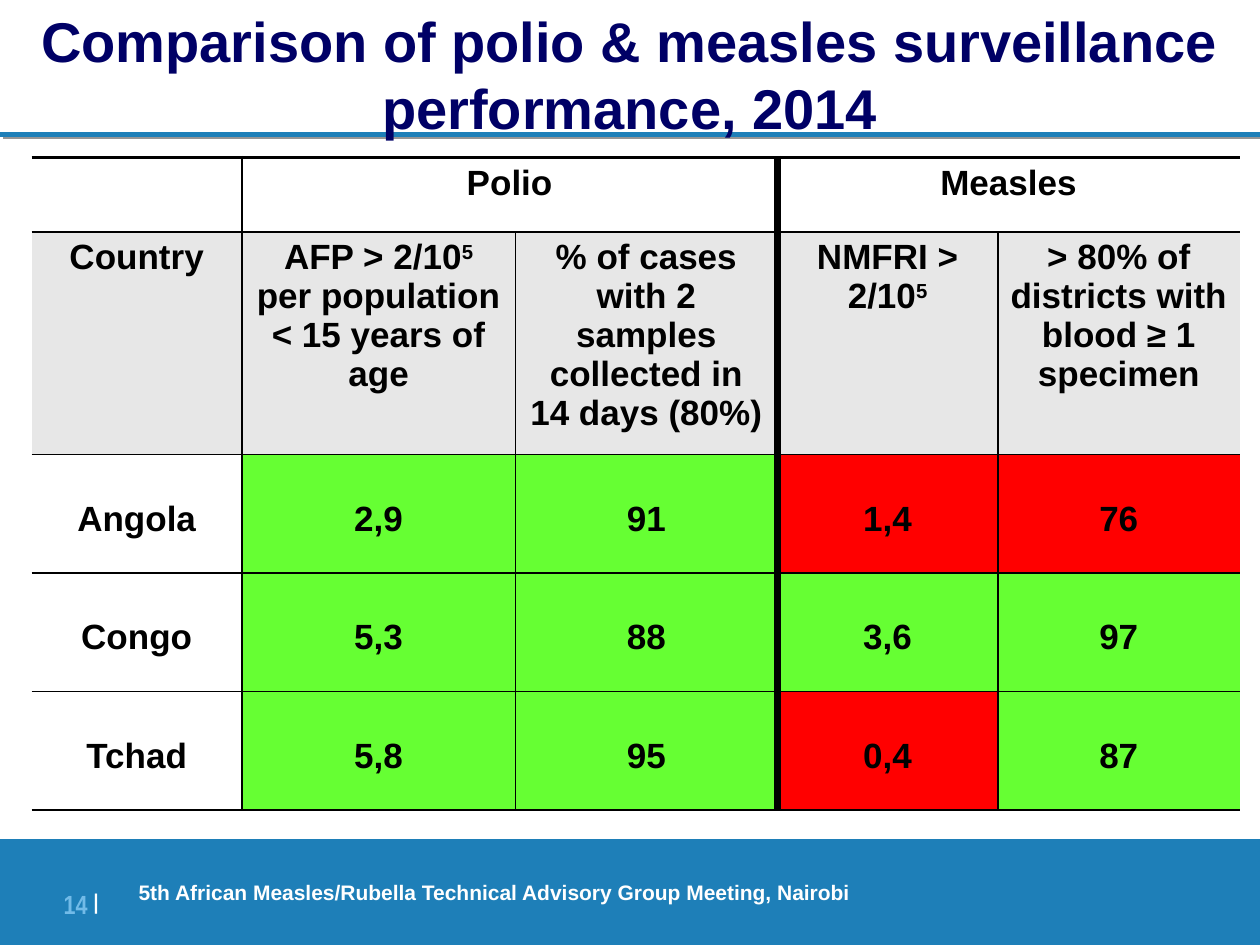
"""Build the slide comparing polio and measles surveillance performance."""
from dataclasses import dataclass

from lxml import etree
from pptx import Presentation
from pptx.dml.color import RGBColor
from pptx.enum.shapes import MSO_CONNECTOR, MSO_SHAPE
from pptx.enum.text import MSO_ANCHOR, PP_ALIGN
from pptx.oxml.ns import qn
from pptx.util import Inches, Pt

CENTER, LEFT, RIGHT = PP_ALIGN.CENTER, PP_ALIGN.LEFT, PP_ALIGN.RIGHT
TOP, MIDDLE = MSO_ANCHOR.TOP, MSO_ANCHOR.MIDDLE
RECTANGLE, STRAIGHT = MSO_SHAPE.RECTANGLE, MSO_CONNECTOR.STRAIGHT


@dataclass(frozen=True)
class Theme:
    font: str = "Arial"
    narrow_font: str = "Arial Narrow"
    blue: str = "1E7FB8"
    pale_blue: str = "72BBE8"
    navy: str = "000066"
    title_shadow: str = "9CCFF0"
    line_shadow: str = "969696"
    black: str = "000000"
    white: str = "FFFFFF"
    grey: str = "E7E7E7"
    green: str = "66FF33"
    red: str = "FF0000"
    title_size: int = 32
    table_size: int = 20
    footer_size: int = 12
    number_size: int = 15
    divider_size: int = 21


@dataclass
class SlideBuilder:
    theme: Theme
    slide: object

    def add_run(self, paragraph, text, size, color, font=None, bold=True, baseline=0):
        run = paragraph.add_run()
        run.text = text
        run.font.size = Pt(size)
        run.font.bold = bold
        run.font.color.rgb = RGBColor.from_string(color)
        run.font.name = font or self.theme.font
        if baseline:
            run._r.get_or_add_rPr().set("baseline", str(baseline * 1000))
        return run

    def shadow(self, color, distance, angle):
        effects = etree.Element(qn("a:effectLst"))
        outer = etree.SubElement(effects, qn("a:outerShdw"), blurRad="0",
                                 dist=str(Pt(distance)), dir=str(angle * 60000))
        etree.SubElement(outer, qn("a:srgbClr"), val=color)
        return effects

    def add_rule(self, y, width):
        rule = self.slide.shapes.add_connector(STRAIGHT, 0, Inches(y), Inches(10), Inches(y))
        rule.line.color.rgb = RGBColor.from_string(self.theme.blue)
        rule.line.width = Pt(width)
        rule._element.spPr.append(self.shadow(self.theme.line_shadow, 2.2, 27))

    def add_band(self, left, top, width, height, text, indent):
        band = self.slide.shapes.add_shape(
            RECTANGLE, Inches(left), Inches(top), Inches(width), Inches(height))
        band.shadow.inherit = False
        band.fill.solid()
        band.fill.fore_color.rgb = RGBColor.from_string(self.theme.blue)
        band.line.fill.background()
        frame = band.text_frame
        frame.word_wrap = True
        frame.vertical_anchor = MIDDLE
        frame.margin_left = Inches(indent)
        paragraph = frame.paragraphs[0]
        paragraph.alignment = LEFT
        self.add_run(paragraph, text, self.theme.footer_size, self.theme.white)

    def add_text(self, left, top, width, height, alignment, anchor=TOP):
        box = self.slide.shapes.add_textbox(
            Inches(left), Inches(top), Inches(width), Inches(height))
        frame = box.text_frame
        frame.word_wrap = True
        frame.vertical_anchor = anchor
        frame.margin_left = frame.margin_right = frame.margin_top = frame.margin_bottom = 0
        paragraph = frame.paragraphs[0]
        paragraph.alignment = alignment
        return paragraph

    def add_title(self, text):
        paragraph = self.add_text(0, 0, 10, 1.17, CENTER, MIDDLE)
        run = self.add_run(paragraph, text, self.theme.title_size, self.theme.navy)
        fill = run._r.get_or_add_rPr().find(qn("a:solidFill"))
        fill.addnext(self.shadow(self.theme.title_shadow, 2, 45))

    def add_page_number(self, number):
        theme = self.theme
        paragraph = self.add_text(0.39, 6.97, 0.39, 0.36, RIGHT)
        self.add_run(paragraph, f"{number} ", theme.number_size, theme.pale_blue, theme.narrow_font)
        self.add_run(paragraph, "|", theme.divider_size, theme.white, theme.narrow_font,
                     baseline=14)

    def add_table(self, left, top, widths, heights):
        table = self.slide.shapes.add_table(
            len(heights), len(widths), Inches(left), Inches(top),
            Inches(sum(widths)), Inches(sum(heights))).table
        table.first_row = table.horz_banding = False
        for column, width in zip(table.columns, widths):
            column.width = Inches(width)
        for row, height in zip(table.rows, heights):
            row.height = Inches(height)
        return table

    def set_borders(self, cell, widths):
        properties = cell._tc.get_or_add_tcPr()
        for side, width in zip("LRTB", widths):
            border = etree.SubElement(properties, qn(f"a:ln{side}"), w=str(Pt(width)))
            if width:
                fill = etree.SubElement(border, qn("a:solidFill"))
                etree.SubElement(fill, qn("a:srgbClr"), val=self.theme.black)
            else:
                etree.SubElement(border, qn("a:noFill"))

    def fill_cell(self, cell, paragraphs, color, borders, margin_top=0.05):
        self.set_borders(cell, borders)
        if color:
            cell.fill.solid()
            cell.fill.fore_color.rgb = RGBColor.from_string(color)
        else:
            cell.fill.background()
        cell.margin_top = Inches(margin_top)
        frame = cell.text_frame
        for index, runs in enumerate(paragraphs):
            paragraph = frame.add_paragraph() if index else frame.paragraphs[0]
            paragraph.alignment = CENTER
            for text, baseline in runs:
                self.add_run(paragraph, text, self.theme.table_size, self.theme.black,
                             baseline=baseline)


def plain(text):
    return [[(text, 0)]]


def add_surveillance_table(builder):
    theme = builder.theme
    vertical_lines = [0, 1, 1, 4.5, 1, 0]
    horizontal_lines = [2, 1, 1, 1, 1, 1]
    headings = [
        plain("Country"),
        [[("AFP > 2/10", 0), ("5", 30)], [("per population < 15 years of age", 0)]],
        plain("% of cases with 2 samples collected in 14 days (80%)"),
        [[("NMFRI > 2/10", 0), ("5", 30)]],
        plain("> 80% of districts with blood ≥ 1 specimen"),
    ]
    results = [
        ("Angola", "2,9", "91", "1,4", "76"),
        ("Congo", "5,3", "88", "3,6", "97"),
        ("Tchad", "5,8", "95", "0,4", "87"),
    ]
    missed_targets = {("Angola", 3), ("Angola", 4), ("Tchad", 3)}
    table = builder.add_table(0.25, 1.25, [1.67, 2.17, 2.08, 1.75, 1.92], [0.59, 1.5] + [0.94] * 3)

    def borders(row, column, span=1):
        return (vertical_lines[column], vertical_lines[column + span],
                horizontal_lines[row], horizontal_lines[row + 1])

    for column, span, text in [(0, 1, ""), (1, 2, "Polio"), (3, 2, "Measles")]:
        cell = table.cell(0, column)
        if span > 1:
            cell.merge(table.cell(0, column + span - 1))
        builder.fill_cell(cell, plain(text) if text else [], theme.white,
                          borders(0, column, span))
    for column, heading in enumerate(headings):
        builder.fill_cell(table.cell(1, column), heading, theme.grey, borders(1, column))
    for row, values in enumerate(results, start=2):
        for column, value in enumerate(values):
            missed = (values[0], column) in missed_targets
            color = (theme.red if missed else theme.green) if column else None
            builder.fill_cell(table.cell(row, column), plain(value), color,
                              borders(row, column), margin_top=0.36)


def main():
    presentation = Presentation()
    presentation.slide_width, presentation.slide_height = Inches(10), Inches(7.5)
    slide = presentation.slides.add_slide(presentation.slide_layouts[6])
    builder = SlideBuilder(Theme(), slide)
    builder.add_rule(1.07, 3)
    builder.add_band(0, 6.66, 10, 0.84,
                     "5th African Measles/Rubella Technical Advisory Group Meeting, Nairobi", 1.1)
    builder.add_page_number(14)
    builder.add_title("Comparison of polio & measles surveillance performance, 2014")
    add_surveillance_table(builder)
    presentation.save("out.pptx")


if __name__ == "__main__":
    main()
